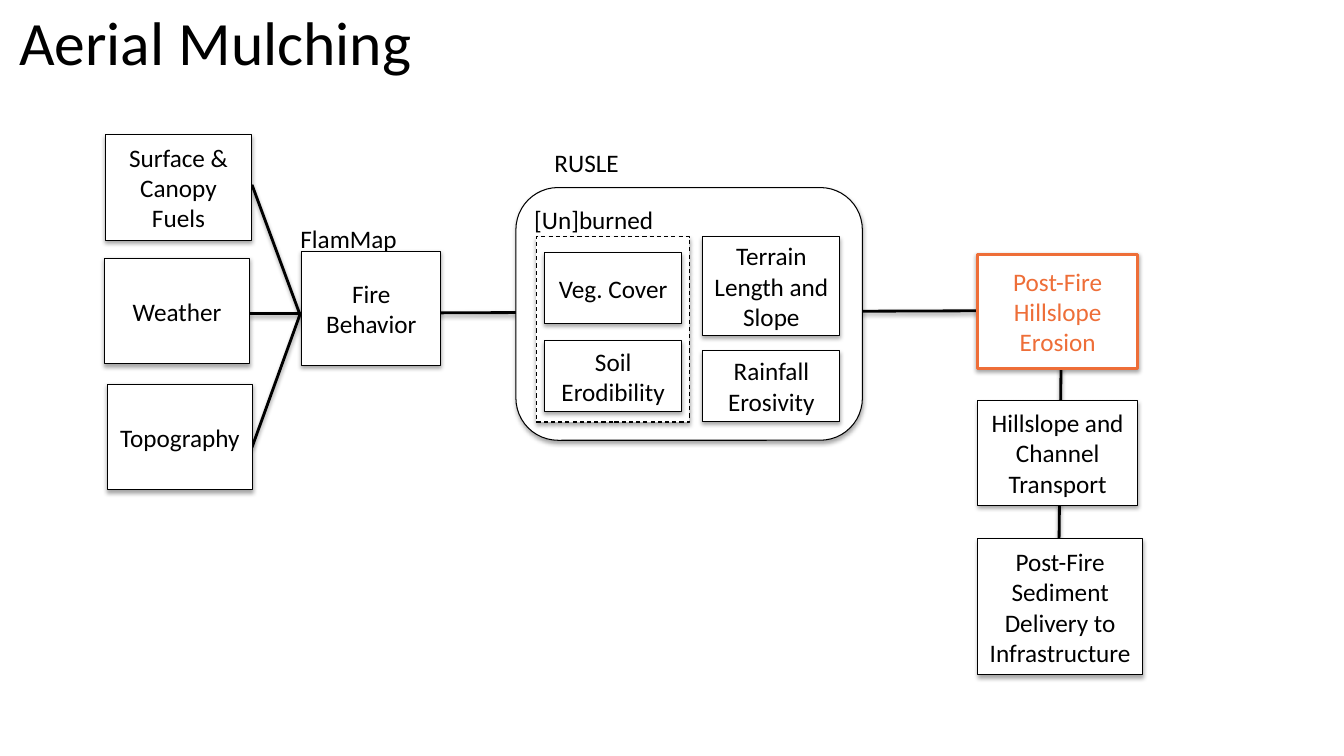
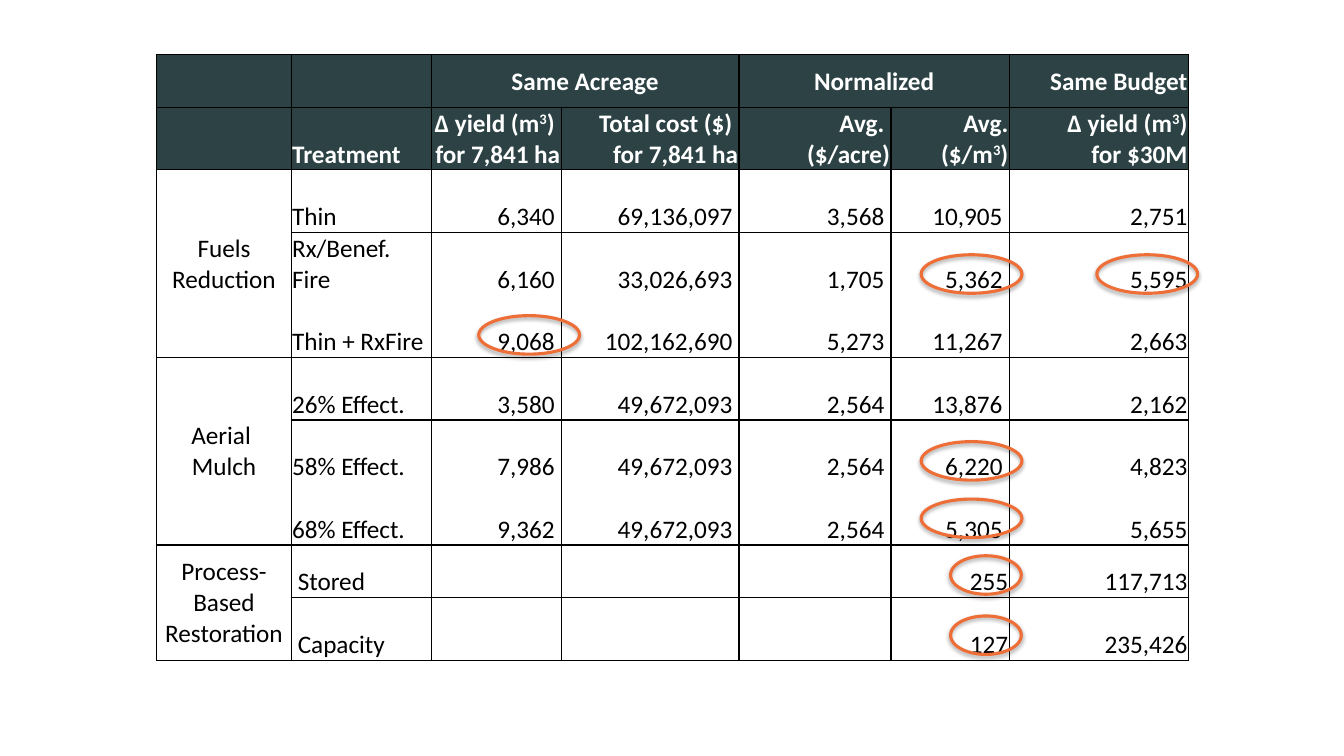
from dataclasses import dataclass

from lxml.etree import SubElement
from pptx import Presentation
from pptx.dml.color import RGBColor
from pptx.enum.dml import MSO_LINE
from pptx.enum.shapes import MSO_CONNECTOR, MSO_SHAPE
from pptx.enum.text import MSO_ANCHOR as Anchor, PP_ALIGN as Align
from pptx.oxml.ns import qn
from pptx.util import Pt


@dataclass(frozen=True)
class Theme:
    font: str = "Calibri"
    title_size: float = 44
    body_size: float = 18
    black: RGBColor = RGBColor.from_string("000000")
    white: RGBColor = RGBColor.from_string("FFFFFF")
    accent: RGBColor = RGBColor.from_string("EE6E38")
    header: RGBColor = RGBColor.from_string("2C4244")
    thin: float = 0.75
    grid: float = 1
    link: float = 2
    thick: float = 2.25


theme = Theme()


def add_text(paragraph, text, color=theme.black, size=theme.body_size, bold=False):
    """Add text run by run; ^3 becomes a raised 3."""
    parts = text.split("^3")
    runs = [(parts[0], False)]
    for part in parts[1:]:
        runs += [("3", True), (part, False)]
    for run_text, raised in runs:
        if not run_text:
            continue
        run = paragraph.add_run()
        run.text = run_text
        run.font.name = theme.font
        run.font.size = Pt(size)
        run.font.bold = bold
        run.font.color.rgb = color
        if raised:
            run.font._element.set("baseline", "30000")


def style_outline(shape, color, width, distance=1.8, opacity=35):
    """Set the outline and the soft shadow below a shape or connector."""
    shape.line.color.rgb = color
    shape.line.width = Pt(width)
    effects = SubElement(shape._element.spPr, qn("a:effectLst"))
    shadow = SubElement(effects, qn("a:outerShdw"), blurRad=str(Pt(3.1)),
                        dist=str(Pt(distance)), dir="5400000", rotWithShape="0")
    shadow_color = SubElement(shadow, qn("a:srgbClr"), val=str(theme.black))
    SubElement(shadow_color, qn("a:alpha"), val=str(opacity * 1000))


presentation = Presentation()
presentation.slide_width = Pt(960)
presentation.slide_height = Pt(540)
title_only, blank = presentation.slide_layouts[5], presentation.slide_layouts[6]

# Slide 1: flow diagram
slide = presentation.slides.add_slide(title_only)
title = slide.shapes.title
title.left, title.top, title.width, title.height = Pt(0), Pt(0), Pt(308), Pt(58)
title.text_frame.margin_top = title.text_frame.margin_bottom = 0
title.text_frame.vertical_anchor = Anchor.MIDDLE
title.text_frame.paragraphs[0].alignment = Align.CENTER
add_text(title.text_frame.paragraphs[0], "Aerial Mulching", size=theme.title_size)

# Connectors, behind the boxes
connectors = [
    (180, 132, 214, 224),
    (180, 319.5, 214.5, 224),
    (756.5, 385, 758, 254),
    (698.5, 222, 178.5, 224),
]
for ends in connectors:
    connector = slide.shapes.add_connector(
        MSO_CONNECTOR.STRAIGHT, *[Pt(value) for value in ends])
    style_outline(connector, theme.black, theme.link, distance=1.6, opacity=38)

# Frames around the erosion factors
frames = [
    (MSO_SHAPE.ROUNDED_RECTANGLE, (368.5, 134, 247.5, 180.5), MSO_LINE.SOLID),
    (MSO_SHAPE.RECTANGLE, (383, 169, 109.5, 132.5), MSO_LINE.DASH),
]
for preset, area, dash in frames:
    frame = slide.shapes.add_shape(preset, *[Pt(value) for value in area])
    frame.fill.solid()
    frame.fill.fore_color.rgb = theme.white
    style_outline(frame, theme.black, theme.thin)
    frame.line.dash_style = dash

# Labels above the boxes
labels = [
    ("FlamMap", 207.5, 156, 90),
    ("RUSLE", 389, 102, 66),
    ("[Un]burned", 374.5, 142.5, 113),
]
for text, left, top, width in labels:
    label = slide.shapes.add_textbox(Pt(left), Pt(top), Pt(width), Pt(29))
    label.text_frame.word_wrap = True
    add_text(label.text_frame.paragraphs[0], text)

# Boxes
boxes = [
    ("Surface & Canopy Fuels", 75.5, 96, 104, 75.5),
    ("Weather", 74.5, 184.5, 104, 75.5),
    ("Topography", 76.5, 274.5, 104, 75.5),
    ("Fire Behavior", 215.5, 179.5, 99.5, 81.5),
    ("Veg. Cover", 389, 180.5, 98, 50.5),
    ("Soil Erodibility", 389, 243.5, 98, 50.5),
    ("Terrain Length and Slope", 502, 169, 98, 70.5),
    ("Rainfall Erosivity", 502, 250.5, 98, 50.5),
    ("Post-Fire Hillslope Erosion", 698.5, 181.5, 114, 81.5),
    ("Hillslope and Channel Transport", 698.5, 286, 114, 75),
    ("Post-Fire Sediment Delivery to Infrastructure", 698.5, 385, 117.5, 97),
]
for text, *area in boxes:
    highlighted = text == "Post-Fire Hillslope Erosion"
    color = theme.accent if highlighted else theme.black
    box = slide.shapes.add_shape(MSO_SHAPE.RECTANGLE, *[Pt(value) for value in area])
    box.fill.solid()
    box.fill.fore_color.rgb = theme.white
    style_outline(box, color, theme.thick if highlighted else theme.thin)
    box.text_frame.word_wrap = True
    box.text_frame.vertical_anchor = Anchor.MIDDLE
    box.text_frame.paragraphs[0].alignment = Align.CENTER
    add_text(box.text_frame.paragraphs[0], text, color)

# Slide 2: cost table
slide = presentation.slides.add_slide(blank)
column_widths = [96, 100, 93, 127, 108.5, 84.5, 128]
short_row, tall_row = 37.6, 44.7
row_heights = [short_row] + [tall_row] * 7 + [short_row, tall_row]
rows = [
    ["", "", "Same Acreage", "", "Normalized", "", "Same Budget"],
    ["", "Treatment", "Δ yield (m^3) \nfor 7,841 ha", "Total cost ($) \nfor 7,841 ha",
     "Avg. \n($/acre)", "Avg.\n($/m^3)", "Δ yield (m^3)\nfor $30M"],
    ["Fuels Reduction", "Thin", "6,340 ", "69,136,097 ", "3,568 ", "10,905 ", "2,751"],
    ["", "Rx/Benef.\nFire", "6,160 ", "33,026,693 ", "1,705 ", "5,362 ", "5,595"],
    ["", "Thin + RxFire", "9,068 ", "102,162,690 ", "5,273 ", "11,267 ", "2,663"],
    ["Aerial \nMulch", "26% Effect.", "3,580 ", "49,672,093 ", "2,564 ", "13,876 ", "2,162"],
    ["", "58% Effect.", "7,986 ", "49,672,093 ", "2,564 ", "6,220 ", "4,823"],
    ["", "68% Effect.", "9,362 ", "49,672,093 ", "2,564 ", "5,305 ", "5,655"],
    ["Process-Based Restoration", " Stored", "", "", "", "255", "117,713"],
    ["", " Capacity", "", "", "", "127", "235,426"],
]
header_rows = 2
open_below = {3, 6}  # rows with no rule between them and the next row

table = slide.shapes.add_table(
    len(rows), len(column_widths), Pt(112), Pt(39),
    Pt(sum(column_widths)), Pt(sum(row_heights))).table
table.first_row = table.horz_banding = False
for column, width in zip(table.columns, column_widths):
    column.width = Pt(width)
for row, height in zip(table.rows, row_heights):
    row.height = Pt(height)

# Merged cells: first row, first column, last row, last column
merges = [(0, 2, 0, 3), (0, 4, 0, 5), (2, 0, 4, 0), (5, 0, 7, 0), (8, 0, 9, 0)]
for first_row, first_column, last_row, last_column in merges:
    table.cell(first_row, first_column).merge(table.cell(last_row, last_column))

for row_index, row_texts in enumerate(rows):
    is_header = row_index < header_rows
    for column_index, text in enumerate(row_texts):
        cell = table.cell(row_index, column_index)
        cell.margin_left = cell.margin_right = cell.margin_top = Pt(0.7)
        cell.margin_bottom = 0
        centered = column_index == 0 or (row_index == 0 and column_index < 6)
        middle = column_index == 0 or row_index == 0
        cell.vertical_anchor = Anchor.MIDDLE if middle else Anchor.BOTTOM

        # Borders come before the fill in the cell properties
        hidden = set()
        if column_index > 0 and row_index in open_below:
            hidden.add("a:lnB")
        if column_index > 0 and row_index - 1 in open_below:
            hidden.add("a:lnT")
        properties = cell._tc.get_or_add_tcPr()
        for side in ("a:lnL", "a:lnR", "a:lnT", "a:lnB"):
            border = SubElement(properties, qn(side), w=str(Pt(theme.grid)))
            if side in hidden:
                SubElement(border, qn("a:noFill"))
            else:
                border_fill = SubElement(border, qn("a:solidFill"))
                SubElement(border_fill, qn("a:srgbClr"), val=str(theme.black))
        if is_header:
            cell.fill.solid()
            cell.fill.fore_color.rgb = theme.header
        else:
            cell.fill.background()

        for line_index, line in enumerate(text.split("\n")):
            frame = cell.text_frame
            paragraph = frame.add_paragraph() if line_index else frame.paragraphs[0]
            if centered:
                paragraph.alignment = Align.CENTER
            else:
                paragraph.alignment = Align.LEFT if column_index == 1 else Align.RIGHT
            add_text(paragraph, line, theme.white if is_header else theme.black,
                     bold=is_header)

# Rings around the key values: left, top, width
wide_ring, narrow_ring = 72, 50.5
rings = [
    (342, 225.5, wide_ring),
    (658, 182, wide_ring),
    (783.5, 182, wide_ring),
    (658, 315.5, wide_ring),
    (658, 356.5, wide_ring),
    (679, 397, narrow_ring),
    (679, 440, narrow_ring),
]
for left, top, width in rings:
    ring = slide.shapes.add_shape(MSO_SHAPE.OVAL, Pt(left), Pt(top), Pt(width), Pt(27.5))
    ring.fill.background()
    style_outline(ring, theme.accent, theme.thick)

presentation.save("out.pptx")
